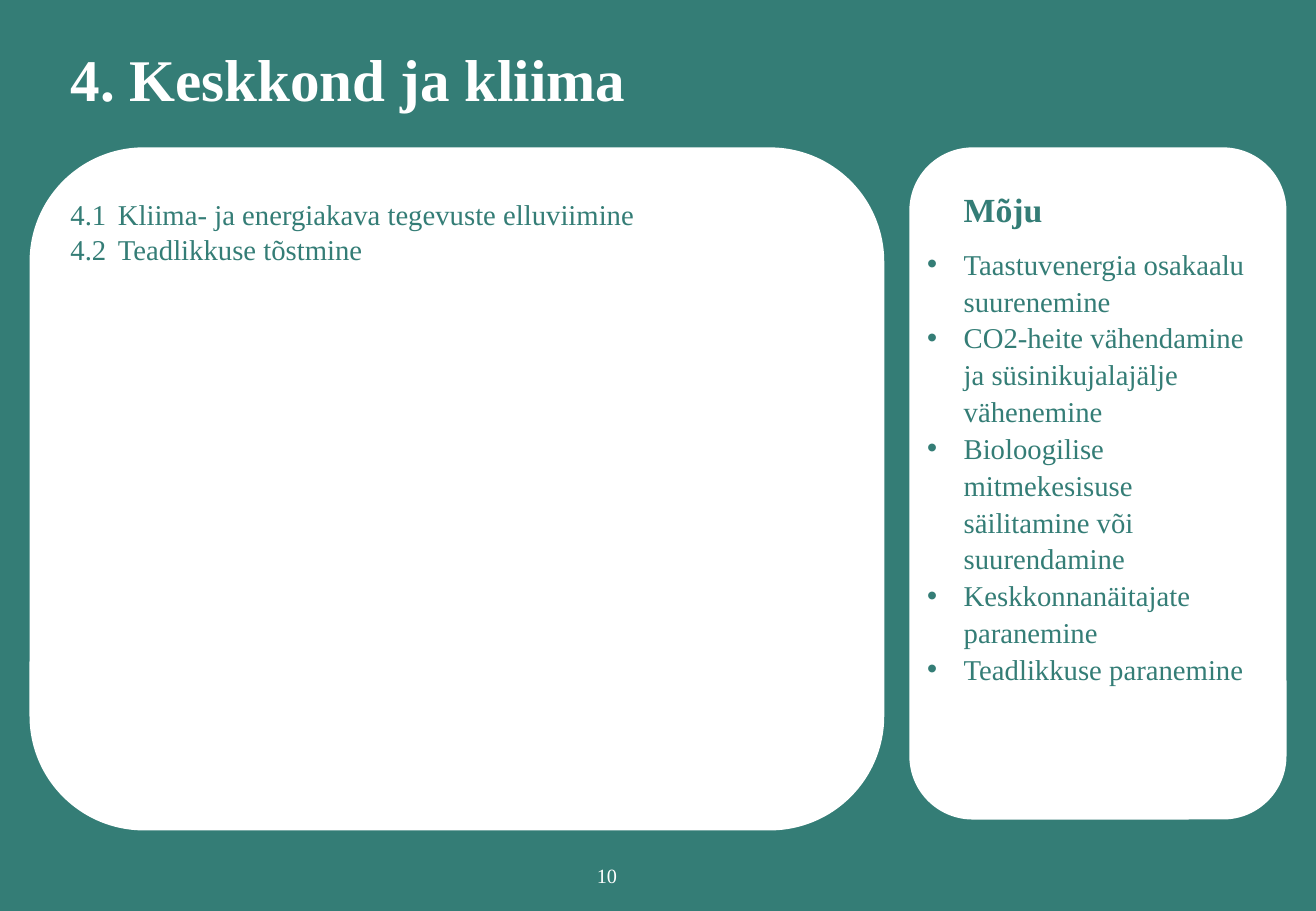
import pptx
import pptx.util
import pptx.dml.color
import pptx.enum.shapes
import pptx.enum.text
import pptx.oxml
import pptx.oxml.ns
from dataclasses import dataclass
from pptx.util import Inches

# Content
TITLE = "4. Keskkond ja kliima"
ACTIVITIES = [
    "4.1\tKliima- ja energiakava tegevuste elluviimine",
    "4.2\tTeadlikkuse tõstmine",
]
IMPACT_HEADING = "Mõju"
IMPACTS = [
    "Taastuvenergia osakaalu suurenemine",
    "CO2-heite vähendamine ja süsinikujalajälje vähenemine",
    "Bioloogilise mitmekesisuse säilitamine või suurendamine",
    "Keskkonnanäitajate paranemine",
    "Teadlikkuse paranemine",
]
PAGE_NUMBER = "10"

# Places: left, top, width, height in inches
PANELS = [(0.25, 1.22, 7.02, 5.61), (7.49, 1.22, 3.09, 5.52)]
TITLE_PLACE = (0.53, 0.38, 9.78, 0.6)
ACTIVITIES_PLACE = (0.53, 1.57, 6.37, 0.67)
IMPACTS_PLACE = (7.49, 1.42, 2.94, 4.36)
NUMBER_PLACE = (4.86, 7.06, 0.27, 0.3)


@dataclass(frozen=True)
class Theme:
    font: str = "Times New Roman"
    green: pptx.dml.color.RGBColor = pptx.dml.color.RGBColor(0x34, 0x7D, 0x76)
    white: pptx.dml.color.RGBColor = pptx.dml.color.RGBColor(0xFF, 0xFF, 0xFF)
    title_size: float = 35
    heading_size: float = 20
    list_size: float = 17
    number_size: float = 12


THEME = Theme()


def place_text(box, place, wrap=True):
    box.left, box.top, box.width, box.height = map(Inches, place)
    frame = box.text_frame
    frame.auto_size = pptx.enum.text.MSO_AUTO_SIZE.NONE
    frame.word_wrap = wrap
    frame.vertical_anchor = pptx.enum.text.MSO_ANCHOR.MIDDLE
    frame.margin_left = frame.margin_right = Inches(0.05)
    frame.margin_top = frame.margin_bottom = Inches(0.05)
    return frame


def add_line(frame, text, size, color, align="LEFT", bold=False, spacing=1.0):
    first = frame.paragraphs[0]
    para = frame.add_paragraph() if first.runs else first
    para.alignment = getattr(pptx.enum.text.PP_ALIGN, align)
    para.line_spacing = spacing
    para.space_before = para.space_after = pptx.util.Pt(0)
    span = para.add_run()
    span.text = text
    span.font.name = THEME.font
    span.font.size = pptx.util.Pt(size)
    span.font.bold = bold
    span.font.color.rgb = color
    return para


def set_indent(para, hanging, bullet=None):
    properties = para._p.get_or_add_pPr()
    properties.set("marL", str(Inches(0.39)))
    properties.set("indent", str(-Inches(hanging)))
    if bullet:
        font = pptx.oxml.ns.qn("a:buFont")
        properties.append(properties.makeelement(font, {"typeface": "Arial"}))
    mark = properties.makeelement(pptx.oxml.ns.qn("a:buChar" if bullet else "a:buNone"), {})
    if bullet:
        mark.set("char", bullet)
    properties.append(mark)


def main():
    deck = pptx.Presentation()
    deck.slide_width, deck.slide_height = Inches(10.83), Inches(7.5)
    page = deck.slides.add_slide(deck.slide_layouts.get_by_name("Two Content"))
    page.background.fill.solid()
    page.background.fill.fore_color.rgb = THEME.green
    title, activities, impacts = page.placeholders

    # White panels behind the text
    for place in PANELS:
        panel = page.shapes.add_shape(
            pptx.enum.shapes.MSO_SHAPE.ROUNDED_RECTANGLE, *map(Inches, place))
        panel.shadow.inherit = False
        panel.fill.solid()
        panel.fill.fore_color.rgb = THEME.white
        panel.line.color.rgb = THEME.white
        panel.line.width = pptx.util.Pt(1)
        title.element.addprevious(panel.element)

    # Title
    frame = place_text(title, TITLE_PLACE)
    add_line(frame, TITLE, THEME.title_size, THEME.white, bold=True, spacing=0.9)

    # Numbered activities
    frame = place_text(activities, ACTIVITIES_PLACE)
    for activity in ACTIVITIES:
        para = add_line(frame, activity, THEME.list_size, THEME.green, "JUSTIFY")
        set_indent(para, 0.39)

    # Impact heading and bullets
    frame = place_text(impacts, IMPACTS_PLACE)
    para = add_line(frame, IMPACT_HEADING, THEME.heading_size, THEME.green, bold=True)
    para.space_after = pptx.util.Pt(9)
    set_indent(para, 0)
    for impact in IMPACTS:
        para = add_line(frame, impact, THEME.list_size, THEME.green, spacing=1.07)
        set_indent(para, 0.3, "•")

    # Page number
    box = page.shapes.add_textbox(*map(Inches, NUMBER_PLACE))
    frame = place_text(box, NUMBER_PLACE, wrap=False)
    add_line(frame, PAGE_NUMBER, THEME.number_size, THEME.white, "CENTER")

    deck.save("out.pptx")


if __name__ == "__main__":
    main()
